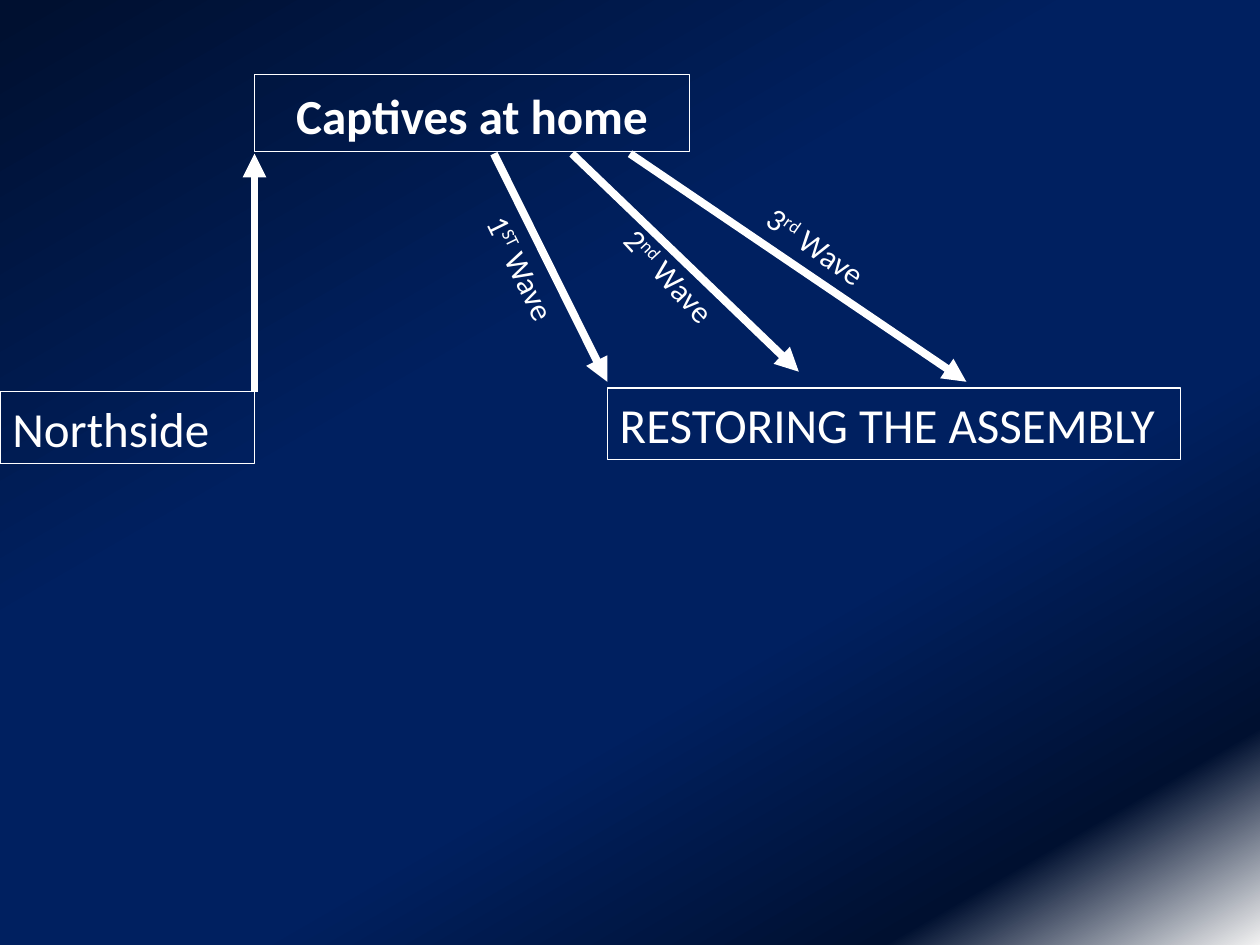
from lxml import etree
from pptx import Presentation
from pptx.dml.color import RGBColor
from pptx.enum import shapes, text
from pptx.oxml import ns
from pptx.util import Inches, Pt

WHITE = RGBColor(0xFF, 0xFF, 0xFF)
NIGHT = RGBColor(0x00, 0x10, 0x30)
NAVY = RGBColor(0x00, 0x20, 0x60)
PALE = RGBColor(0xF2, 0xF2, 0xF2)

STOPS = [(1, NIGHT), (38, NAVY), (65, NAVY), (87, NIGHT), (100, PALE)]
ANGLE = 60

TITLE = ("Captives at home", (2.02, 0.59, 3.45, 0.61))
BOXES = [
    ("Northside", (0, 3.11, 2.02, 0.57)),
    ("RESTORING THE ASSEMBLY", (4.82, 3.08, 4.55, 0.57)),
]
ARROWS = [
    (2.02, 3.11, 2.02, 1.22),
    (3.92, 1.22, 4.82, 3.03),
    (4.54, 1.22, 6.34, 2.95),
    (5, 1.22, 7.67, 3.03),
]
# number, ordinal suffix, place, rotation, wrap
WAVES = [
    ("1", "ST", (3.49, 2.1, 1.47, 0.4), 63.8, True),
    ("2", "nd", (4.76, 2, 1.13, 0.4), 47.1, False),
    ("3", "rd", (5.94, 1.76, 1.1, 0.4), 35, False),
]


def style(font, size, **more):
    font.color.rgb = WHITE
    for key, val in {"name": "Calibri", "size": Pt(size), **more}.items():
        setattr(font, key, val)


def outline(shape, width):
    shape.line.color.rgb = WHITE
    shape.line.width = Pt(width)


def add(parent, tag, **attrs):
    return etree.SubElement(parent, ns.qn(tag), attrs)


def paint(slide):
    """Fill the background with the multi-stop gradient."""
    slide.background.fill.gradient()
    grad = slide.element.find(".//" + ns.qn("a:gradFill"))
    for kid in list(grad):
        grad.remove(kid)
    stops = add(grad, "a:gsLst")
    for pos, color in STOPS:
        stop = add(stops, "a:gs", pos=str(pos * 1000))
        add(stop, "a:srgbClr", val=str(color))
    add(grad, "a:lin", ang=str(ANGLE * 60000), scaled="0")


def head(slide):
    words, place = TITLE
    title = slide.shapes.title
    for key, val in zip(("left", "top", "width", "height"), place):
        setattr(title, key, Inches(val))
    outline(title, 0.75)
    frame = title.text_frame
    frame.text = words
    frame.auto_size = text.MSO_AUTO_SIZE.NONE
    frame.vertical_anchor = text.MSO_ANCHOR.BOTTOM
    para = frame.paragraphs[0]
    para.alignment = text.PP_ALIGN.CENTER
    para.line_spacing = 0.9
    style(para.font, 28, bold=True)


def label(slide, place, wrap=True):
    box = slide.shapes.add_textbox(*map(Inches, place))
    box.text_frame.word_wrap = wrap
    box.text_frame.auto_size = text.MSO_AUTO_SIZE.SHAPE_TO_FIT_TEXT
    return box, box.text_frame.paragraphs[0]


def arrow(slide, ends):
    line = slide.shapes.add_connector(
        shapes.MSO_CONNECTOR.STRAIGHT, *map(Inches, ends))
    outline(line, 4.5)
    add(line.line._get_or_add_ln(), "a:tailEnd", type="triangle")
    add(line.element.spPr, "a:effectLst")


def main():
    deck = Presentation()
    deck.slide_width, deck.slide_height = Inches(10), Inches(7.5)
    slide = deck.slides.add_slide(deck.slide_layouts[5])
    paint(slide)
    head(slide)
    for ends in ARROWS:
        arrow(slide, ends)
    for words, place in BOXES:
        box, para = label(slide, place)
        outline(box, 0.75)
        para.text = words
        style(para.font, 28)
    for num, suffix, place, turn, wrap in WAVES:
        box, para = label(slide, place, wrap)
        box.rotation = turn
        for part in (num, suffix, " Wave"):
            run = para.add_run()
            run.text = part
            style(run.font, 18)
            if part == suffix:
                run.font._element.set("baseline", "30000")
    deck.save("out.pptx")


if __name__ == "__main__":
    main()
